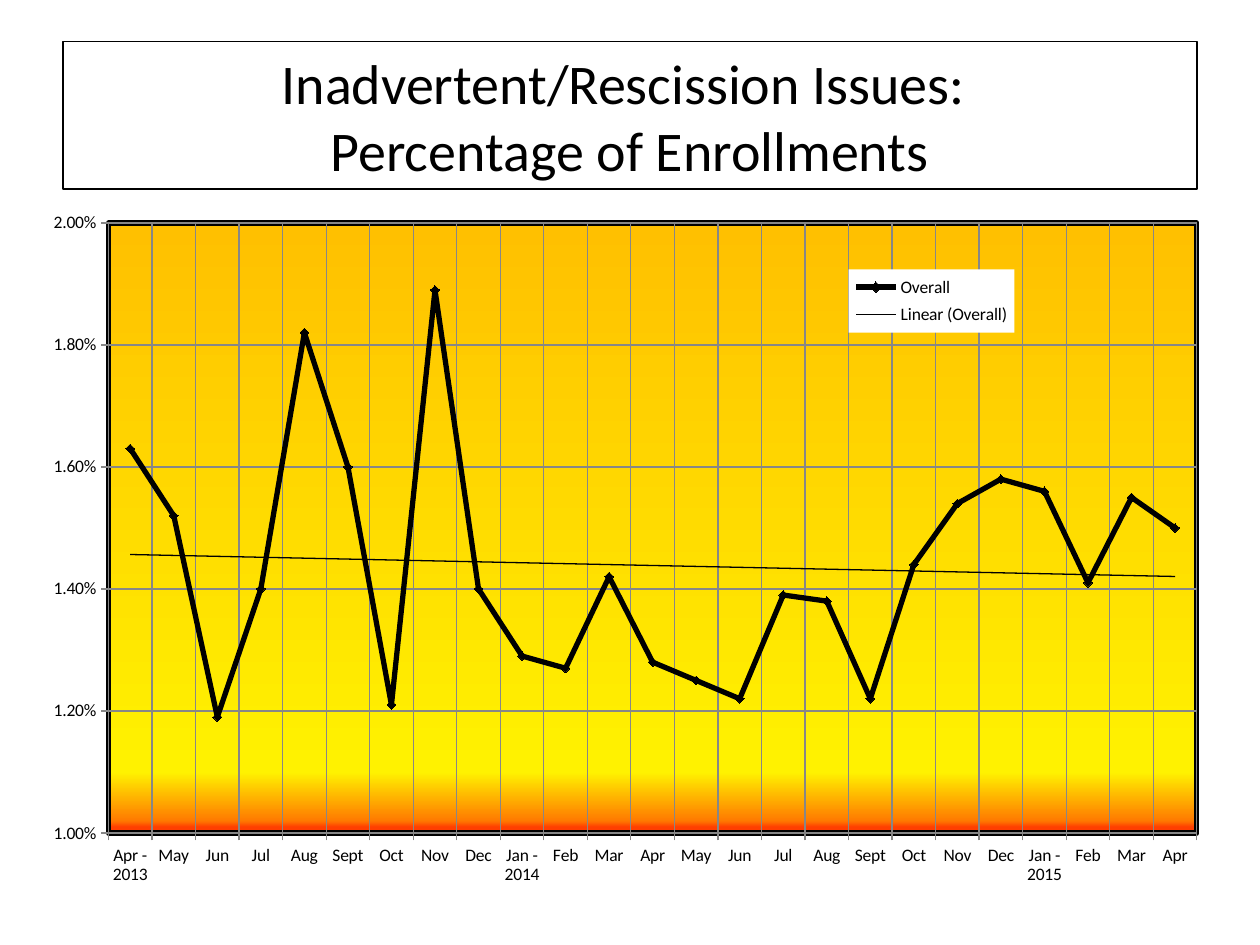
from lxml.etree import fromstring
from pptx import Presentation
from pptx.chart.data import CategoryChartData
from pptx.dml.color import RGBColor
from pptx.enum.chart import XL_CHART_TYPE as ChartType, XL_LEGEND_POSITION as LegendPosition
from pptx.enum.chart import XL_MARKER_STYLE as MarkerStyle, XL_TICK_MARK as TickMark
from pptx.enum.text import MSO_ANCHOR as Anchor, PP_ALIGN as Align
from pptx.oxml.ns import qn
from pptx.util import Inches, Pt

# Content
TITLE = "Inadvertent/Rescission Issues: \vPercentage of Enrollments"
SERIES = "Overall"
YEARS = [
    ("2013", [("Apr", 1.63), ("May", 1.52), ("Jun", 1.19), ("Jul", 1.40), ("Aug", 1.82),
              ("Sept", 1.60), ("Oct", 1.21), ("Nov", 1.89), ("Dec", 1.40)]),
    ("2014", [("Jan", 1.29), ("Feb", 1.27), ("Mar", 1.42), ("Apr", 1.28), ("May", 1.25),
              ("Jun", 1.22), ("Jul", 1.39), ("Aug", 1.38), ("Sept", 1.22), ("Oct", 1.44),
              ("Nov", 1.54), ("Dec", 1.58)]),
    ("2015", [("Jan", 1.56), ("Feb", 1.41), ("Mar", 1.55), ("Apr", 1.50)]),
]

THEME = {
    "font": "Calibri", "title_size": 32, "chart_size": 10,
    "ink": "000000", "paper": "FFFFFF", "grid": "878787",
    "heat": [(0, "FFC000"), (90, "FFF200"), (98, "FF7A00"), (99, "FF3F00")],
}

# Places: inches on the slide, then shares of the chart (x, y, w, h)
SLIDE = (10, 7.5)
TITLE_AREA = (0.5, 0.33, 9, 1.17)
CHART_AREA = (0.25, 1.58, 9.4, 5.58)
PLOT_SHARE = (0.065, 0.034, 0.919, 0.868)
LEGEND_SHARE = (0.69, 0.1, 0.14, 0.09)

NAMESPACES = ('xmlns:c="http://schemas.openxmlformats.org/drawingml/2006/chart" '
              'xmlns:a="http://schemas.openxmlformats.org/drawingml/2006/main"')


def color(name):
    return RGBColor.from_string(THEME[name])


def style_line(line, name, width):
    line.color.rgb = color(name)
    line.width = Pt(width)


def style_font(font, size):
    font.name = THEME["font"]
    font.size = Pt(THEME[size])
    font.color.rgb = color("ink")


def chart_xml(tag, body):
    return fromstring(f"<c:{tag} {NAMESPACES}>{body}</c:{tag}>")


def line_xml(points):
    return (f'<a:ln w="{Pt(points)}"><a:solidFill><a:srgbClr val="{THEME["ink"]}"/>'
            '</a:solidFill></a:ln>')


def manual_layout(share, inner=False):
    target = '<c:layoutTarget val="inner"/>' if inner else ""
    modes = "".join(f'<c:{axis}Mode val="edge"/>' for axis in "xy")
    sizes = "".join(f'<c:{key} val="{value}"/>' for key, value in zip("xywh", share))
    return chart_xml("layout", f"<c:manualLayout>{target}{modes}{sizes}</c:manualLayout>")


def add_title(page):
    box = page.shapes.add_textbox(*map(Inches, TITLE_AREA))
    style_line(box.line, "ink", 0.75)
    frame = box.text_frame
    frame.word_wrap = True
    frame.vertical_anchor = Anchor.MIDDLE
    frame.text = TITLE
    para = frame.paragraphs[0]
    para.alignment = Align.CENTER
    for span in para.runs:
        style_font(span.font, "title_size")


def style_plot(chart):
    area = chart._chartSpace.chart.plotArea
    for old in area.findall(qn("c:layout")):
        area.remove(old)
    area.insert(0, manual_layout(PLOT_SHARE, inner=True))
    stops = "".join(f'<a:gs pos="{share * 1000}"><a:srgbClr val="{tone}"/></a:gs>'
                    for share, tone in THEME["heat"])
    area.append(chart_xml("spPr", f'<a:gradFill><a:gsLst>{stops}</a:gsLst>'
                                  f'<a:lin ang="5400000" scaled="0"/></a:gradFill>{line_xml(3)}'))


def style_axes(chart):
    for axis in (chart.category_axis, chart.value_axis):
        axis.has_major_gridlines = True
        axis.major_tick_mark = TickMark.OUTSIDE
        axis.minor_tick_mark = TickMark.NONE
        for line in (axis.major_gridlines.format.line, axis.format.line):
            style_line(line, "grid", 0.75)
    scale = chart.value_axis
    scale.minimum_scale, scale.maximum_scale, scale.major_unit = 0.01, 0.02, 0.002
    scale.tick_labels.number_format = "0.00%"
    scale.tick_labels.number_format_is_linked = False


def style_series(series):
    series.smooth = False
    style_line(series.format.line, "ink", 3)
    marker = series.marker
    marker.style, marker.size = MarkerStyle.DIAMOND, 5
    marker.format.fill.solid()
    marker.format.fill.fore_color.rgb = color("ink")
    style_line(marker.format.line, "ink", 0.75)
    trend = chart_xml("trendline", f'<c:spPr>{line_xml(0.75)}</c:spPr>'
                                   '<c:trendlineType val="linear"/>'
                                   '<c:dispRSqr val="0"/><c:dispEq val="0"/>')
    series._element.find(qn("c:cat")).addprevious(trend)


def style_legend(chart):
    chart.has_legend = True
    legend = chart.legend
    legend.position = LegendPosition.RIGHT
    legend.include_in_layout = False
    style_font(legend.font, "chart_size")
    element = legend._element
    for old in element.findall(qn("c:layout")):
        element.remove(old)
    element.find(qn("c:legendPos")).addnext(manual_layout(LEGEND_SHARE))
    fill = f'<a:solidFill><a:srgbClr val="{THEME["paper"]}"/></a:solidFill>'
    element.find(qn("c:txPr")).addprevious(chart_xml("spPr", fill))


def add_chart(page):
    data = CategoryChartData(number_format="0.00%")
    # The first month of each year carries the year
    data.categories = [f"{month} - {year}" if index == 0 else month
                       for year, months in YEARS for index, (month, _) in enumerate(months)]
    data.add_series(SERIES, [round(percent / 100, 4)
                             for _, months in YEARS for _, percent in months])
    chart = page.shapes.add_chart(ChartType.LINE_MARKERS, *map(Inches, CHART_AREA), data).chart
    chart.has_title = False
    style_font(chart.font, "chart_size")
    chart.plots[0].vary_by_categories = False
    style_axes(chart)
    style_series(chart.plots[0].series[0])
    style_plot(chart)
    style_legend(chart)


def main():
    deck = Presentation()
    deck.slide_width, deck.slide_height = map(Inches, SLIDE)
    page = deck.slides.add_slide(deck.slide_layouts[6])
    add_title(page)
    add_chart(page)
    deck.save("out.pptx")


if __name__ == "__main__":
    main()
